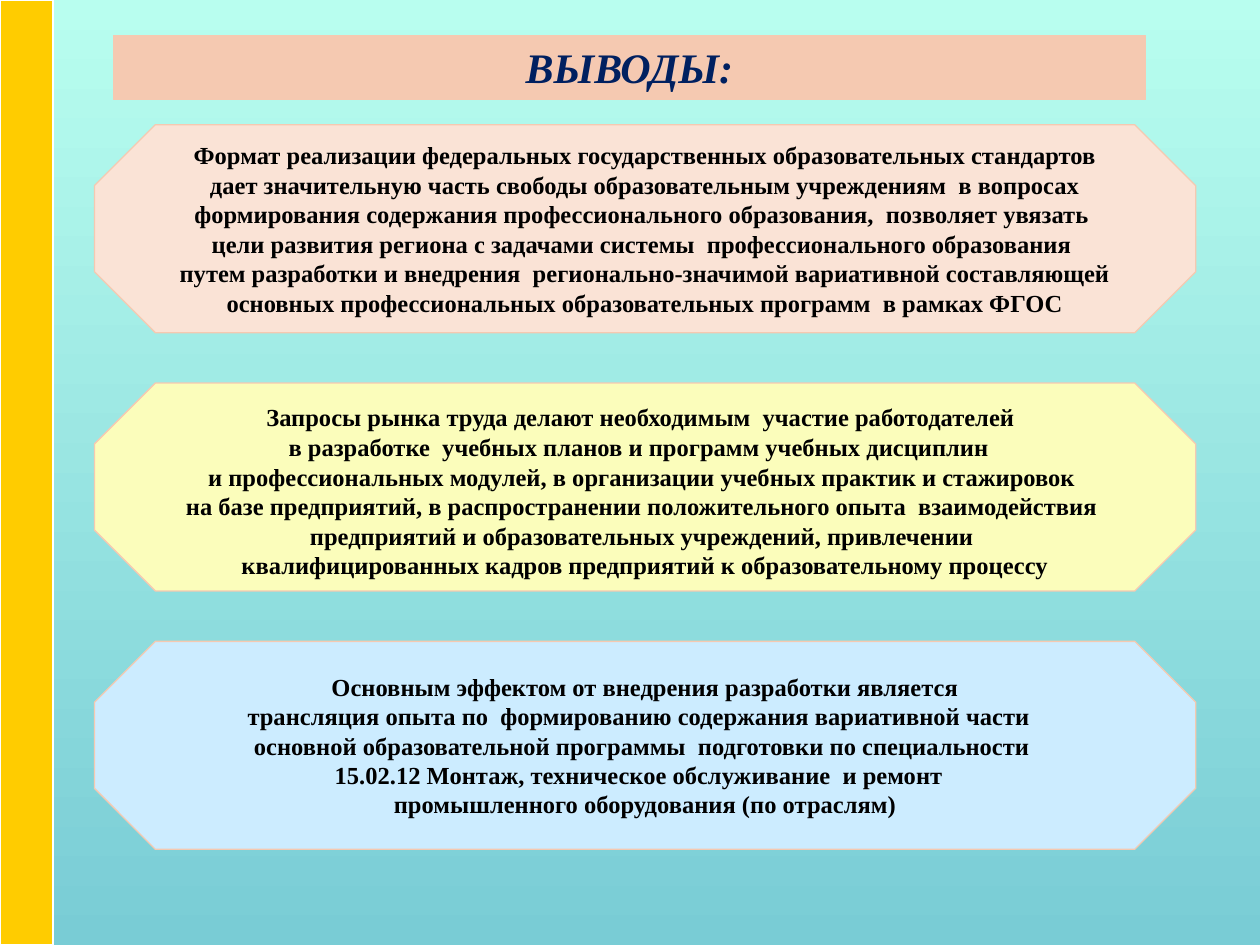
from pptx import Presentation
from pptx.dml.color import RGBColor
from pptx.enum.shapes import MSO_SHAPE
from pptx.enum.text import MSO_ANCHOR, MSO_AUTO_SIZE, PP_ALIGN
from pptx.util import Inches, Pt

COLORS = {
    "sky_top": "B8FEEF",
    "sky_bottom": "79CCD5",
    "stripe": "FFCC00",
    "white": "FFFFFF",
    "peach": "F5C9B1",
    "navy": "002060",
    "black": "000000",
    "pink": "FAE3D6",
    "yellow": "FBFDBB",
    "blue": "CCECFF",
}
SERIF = "Times New Roman"
FIRST_TOP, PITCH = 0.99, 2.05

CONCLUSIONS = [
    ("pink", [
        "Формат реализации федеральных государственных образовательных стандартов",
        " дает значительную часть свободы образовательным учреждениям  в вопросах ",
        "формирования содержания профессионального образования,  позволяет увязать ",
        "цели развития региона с задачами системы  профессионального образования ",
        "путем разработки и внедрения  регионально-значимой вариативной составляющей",
        " основных профессиональных образовательных программ  в рамках ФГОС ",
    ]),
    ("yellow", [
        "Запросы рынка труда делают необходимым  участие работодателей",
        "в разработке  учебных планов и программ учебных дисциплин  ",
        "и профессиональных модулей, в организации учебных практик и стажировок ",
        "на базе предприятий, в распространении положительного опыта  взаимодействия ",
        "предприятий и образовательных учреждений, привлечении ",
        "квалифицированных кадров предприятий к образовательному процессу",
    ]),
    ("blue", [
        "Основным эффектом от внедрения разработки является",
        "трансляция опыта по  формированию содержания вариативной части  ",
        "основной образовательной программы  подготовки по специальности ",
        "15.02.12 Монтаж, техническое обслуживание  и ремонт  ",
        "промышленного оборудования (по отраслям)",
    ]),
]


def rgb(color):
    """Return the named colour."""
    return RGBColor.from_string(COLORS[color])


def paint_background(slide):
    """Fill the slide with a gradient running from top to bottom."""
    fill = slide.background.fill
    fill.gradient()
    fill.gradient_angle = 270
    for stop, position, color in zip(fill.gradient_stops, (0, 1), ("sky_top", "sky_bottom")):
        stop.position = position
        stop.color.rgb = rgb(color)


def add_panel(slide, preset, box, fill, line):
    """Add a flat outlined shape."""
    panel = slide.shapes.add_shape(preset, *map(Inches, box))
    panel.shadow.inherit = False
    panel.fill.solid()
    panel.fill.fore_color.rgb = rgb(fill)
    panel.line.color.rgb = rgb(line)
    panel.line.width = Pt(0.75)
    return panel


def add_run(paragraph, text, size, color="black", font=SERIF, italic=False):
    """Add a bold run to a centred paragraph."""
    paragraph.alignment = PP_ALIGN.CENTER
    run = paragraph.add_run()
    run.text = text
    run.font.size = Pt(size)
    run.font.name = font
    run.font.bold = True
    run.font.italic = italic
    run.font.color.rgb = rgb(color)


def add_heading(slide, text):
    """Add the heading bar."""
    heading = add_panel(slide, MSO_SHAPE.RECTANGLE, (0.9, 0.28, 8.19, 0.51), "peach", "peach")
    frame = heading.text_frame
    frame.word_wrap = True
    frame.auto_size = MSO_AUTO_SIZE.SHAPE_TO_FIT_TEXT
    frame.vertical_anchor = MSO_ANCHOR.TOP
    add_run(frame.paragraphs[0], text, 24, "navy", italic=True)


def add_conclusion(slide, top, fill, lines):
    """Add an octagon with one centred paragraph per line."""
    conclusion = add_panel(slide, MSO_SHAPE.OCTAGON, (0.75, top, 8.74, 1.65), fill, "peach")
    conclusion.adjustments[0] = 0.293
    frame = conclusion.text_frame
    frame.word_wrap = False
    frame.vertical_anchor = MSO_ANCHOR.MIDDLE
    for index, line in enumerate(lines):
        paragraph = frame.add_paragraph() if index else frame.paragraphs[0]
        add_run(paragraph, line, 14)
    return frame


def main():
    """Build and save the conclusions slide."""
    deck = Presentation()
    deck.slide_width, deck.slide_height = Inches(10), Inches(7.5)
    slide = deck.slides.add_slide(deck.slide_layouts[6])
    paint_background(slide)
    add_panel(slide, MSO_SHAPE.RECTANGLE, (0, 0, 0.42, 7.5), "stripe", "white")
    add_heading(slide, "ВЫВОДЫ:")
    for index, (fill, lines) in enumerate(CONCLUSIONS):
        frame = add_conclusion(slide, FIRST_TOP + index * PITCH, fill, lines)
        if fill == "yellow":
            add_run(frame.paragraphs[0], " ", 18, font="Arial")
    deck.save("out.pptx")


if __name__ == "__main__":
    main()
